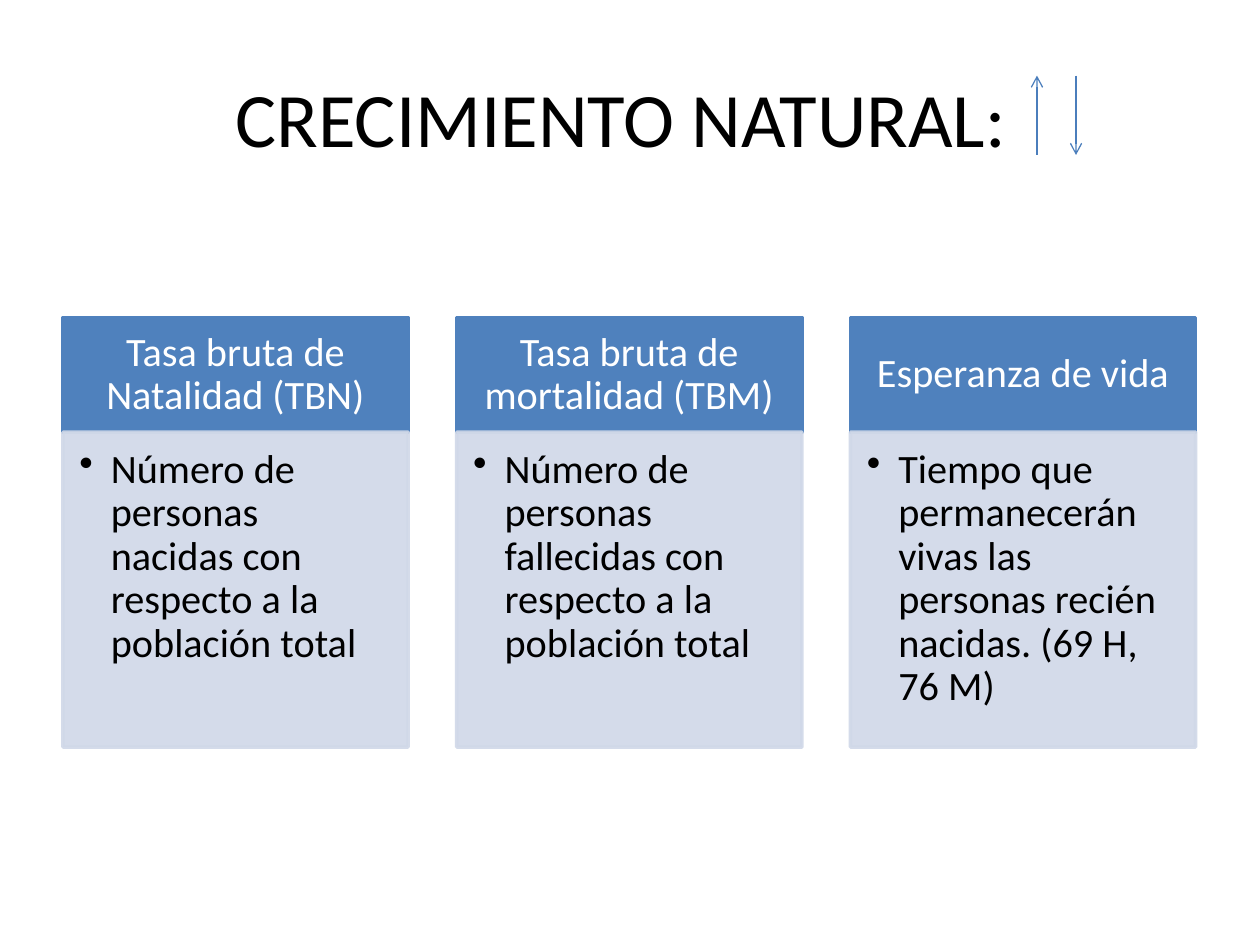
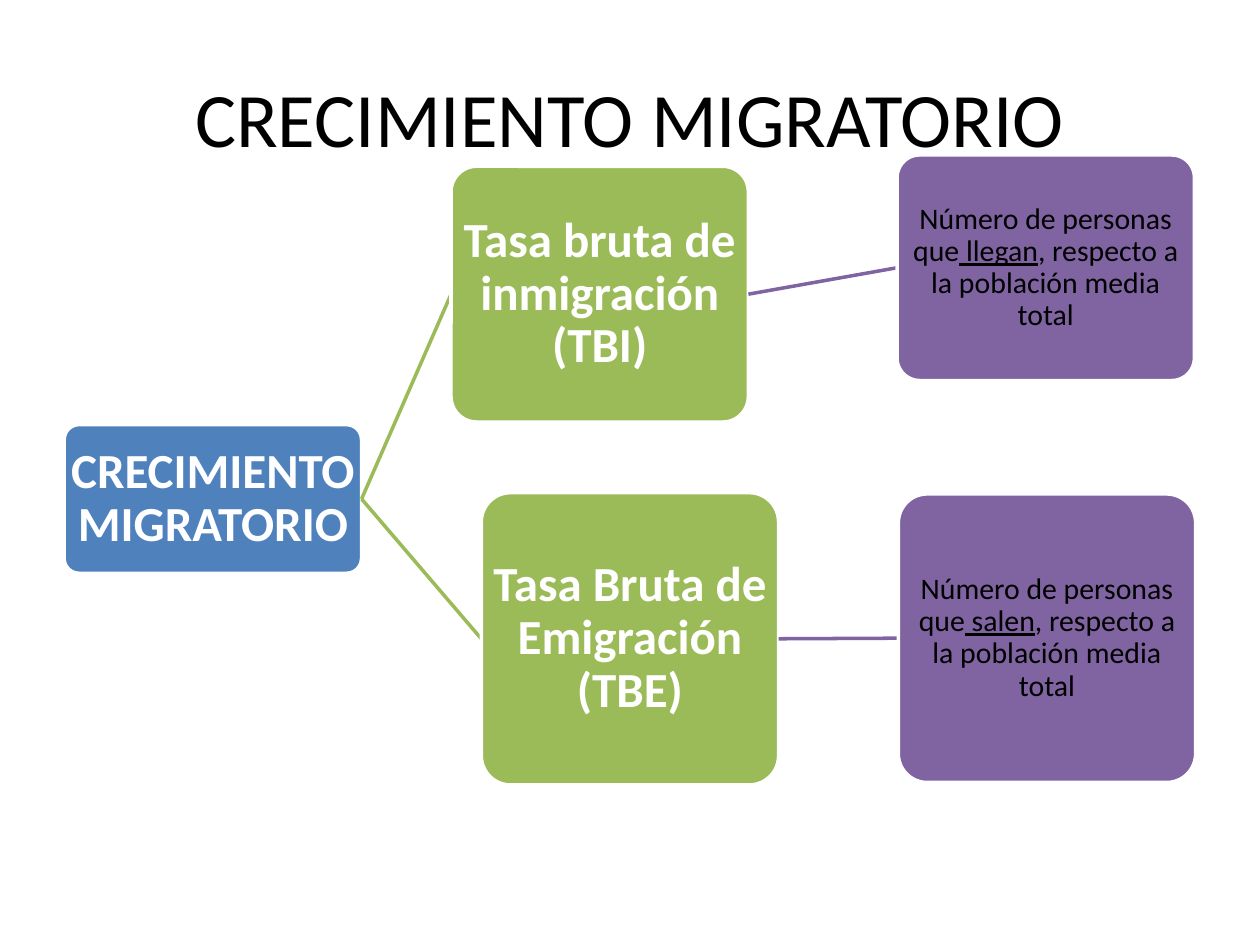
import pptx
import pptx.dml.color
import pptx.enum.shapes
import pptx.enum.text
import pptx.oxml.ns
import pptx.util
from lxml import etree

Inches = pptx.util.Inches
Pt = pptx.util.Pt
qn = pptx.oxml.ns.qn
SHAPES = pptx.enum.shapes.MSO_SHAPE
ALIGN = pptx.enum.text.PP_ALIGN
ANCHOR = pptx.enum.text.MSO_ANCHOR

COLORS = {
    "black": "000000", "white": "FFFFFF", "blue": "4F81BD", "arrow": "4B7EBC",
    "panel": "D0D8E8", "green": "9BBB59", "purple": "8064A2",
}
TITLE_BOX = (0.5, 0.3, 9, 1.25)
TITLE = {"size": 44, "color": "black"}
HEADING = {"size": 23, "color": "white", "insets": (0.18, 0.1, 0.18, 0.1)}
DETAIL = {"size": 23, "color": "black", "insets": (0.13, 0.13, 0.18, 0.2),
          "align": ALIGN.LEFT, "anchor": ANCHOR.TOP}
RATE = {"size": 28, "color": "white", "bold": True, "insets": (0.02,) * 4}
MEANING = {"size": 17, "color": "black", "insets": (0.01,) * 4}


def rgb(color):
    return pptx.dml.color.RGBColor.from_string(COLORS[color])


def write(shape, runs, size, color, bold=False, insets=(0.1, 0.05, 0.1, 0.05),
          align=ALIGN.CENTER, anchor=ANCHOR.MIDDLE, spacing=0.9):
    """Write one paragraph; runs are (text, underlined) pairs."""
    frame = shape.text_frame
    left, top, right, bottom = map(Inches, insets)
    layout = {"word_wrap": True, "vertical_anchor": anchor,
              "margin_left": left, "margin_top": top,
              "margin_right": right, "margin_bottom": bottom}
    for name, value in layout.items():
        setattr(frame, name, value)
    paragraph = frame.paragraphs[0]
    paragraph.alignment, paragraph.line_spacing = align, spacing
    for text, underlined in runs:
        run = paragraph.add_run()
        run.text = text
        style = {"name": "Calibri", "size": Pt(size), "bold": bold, "underline": underlined}
        for name, value in style.items():
            setattr(run.font, name, value)
        run.font.color.rgb = rgb(color)
    return paragraph


def add_box(slide, kind, box, fill, line):
    shape = slide.shapes.add_shape(kind, *map(Inches, box))
    shape.shadow.inherit = False
    shape.fill.solid()
    shape.fill.fore_color.rgb = rgb(fill)
    shape.line.color.rgb = rgb(line)
    shape.line.width = Pt(2)
    return shape


def add_line(slide, start, end, color, width):
    line = slide.shapes.add_connector(
        pptx.enum.shapes.MSO_CONNECTOR.STRAIGHT, *map(Inches, start + end))
    line.line.color.rgb = rgb(color)
    line.line.width = Pt(width)
    etree.SubElement(line._element.spPr, qn("a:effectLst"))
    return line


def add_title(slide, text):
    write(slide.shapes.add_textbox(*map(Inches, TITLE_BOX)), [(text, False)],
          spacing=1.0, **TITLE)


def add_arrow(slide, start, end):
    arrow = add_line(slide, start, end, "arrow", 0.75)
    etree.SubElement(arrow.line._get_or_add_ln(), qn("a:tailEnd"), type="arrow")


def add_bullet(paragraph):
    properties = paragraph._p.get_or_add_pPr()
    properties.set("marL", str(Inches(0.25)))
    properties.set("indent", str(-Inches(0.25)))
    etree.SubElement(properties, qn("a:buChar"), char="•")


def add_rate_card(slide, box, heading, detail):
    """A solid heading above a translucent panel with one bullet."""
    left, top, width, height = box
    heading_height = 0.91
    header = add_box(slide, SHAPES.RECTANGLE, (left, top, width, heading_height), "blue", "blue")
    write(header, [(heading, False)], **HEADING)
    panel = add_box(slide, SHAPES.RECTANGLE,
                    (left, top + heading_height, width, height - heading_height),
                    "panel", "panel")
    for color in panel._element.spPr.iter(qn("a:srgbClr")):
        etree.SubElement(color, qn("a:alpha"), val="90000")
    add_bullet(write(panel, [(detail, False)], **DETAIL))


def add_node(slide, box, fill, runs, style, parent=None):
    """A rounded node, joined to its parent by a line lying beneath it."""
    left, top, width, height = box
    if parent is not None:
        middle = (left, top + height / 2)
        branch = add_line(slide, middle, middle, fill, 2)
        branch.begin_connect(parent, 3)
    node = add_box(slide, SHAPES.ROUNDED_RECTANGLE, box, fill, "white")
    node.adjustments[0] = 0.1
    write(node, runs, **style)
    if parent is not None:
        branch.end_connect(node, 1)
    return node


def build_natural_growth(slide):
    add_title(slide, "CRECIMIENTO NATURAL: ")
    # Three cards in equal columns
    cards = [
        ("Tasa bruta de Natalidad (TBN)",
         "Número de personas nacidas con respecto a la población total"),
        ("Tasa bruta de mortalidad (TBM)",
         "Número de personas fallecidas con respecto a la población total"),
        ("Esperanza de vida",
         "Tiempo que permanecerán vivas las personas recién nacidas. (69 H, 76 M)"),
    ]
    for column, (heading, detail) in enumerate(cards):
        add_rate_card(slide, (0.5 + column * 3.125, 2.52, 2.74, 3.41), heading, detail)
    # Rise and fall arrows beside the title
    add_arrow(slide, (8.23, 1.23), (8.23, 0.6))
    add_arrow(slide, (8.54, 0.6), (8.54, 1.23))


def build_migratory_growth(slide):
    add_title(slide, "CRECIMIENTO MIGRATORIO")
    # Root of the tree
    width = 2.36
    growth = add_node(slide, (0.51, 3.37, width, 1.18), "blue",
                      [("CRECIMIENTO MIGRATORIO", False)], RATE)
    # Each rate and its meaning
    branches = [
        ("Tasa bruta de inmigración (TBI)", (3.58, 1.32, width, 2.03),
         " llegan", (7.12, 1.23, width, 1.79)),
        ("Tasa Bruta de Emigración (TBE)", (3.82, 3.91, width, 2.32),
         " salen", (7.13, 3.92, width, 2.29)),
    ]
    for rate_name, rate_box, verb, meaning_box in branches:
        rate = add_node(slide, rate_box, "green", [(rate_name, False)], RATE, growth)
        meaning = [("Número de personas que", False), (verb, True),
                   (", respecto a la población media total", False)]
        add_node(slide, meaning_box, "purple", meaning, MEANING, rate)


def main():
    deck = pptx.Presentation()
    deck.slide_width, deck.slide_height = Inches(10), Inches(7.5)
    for build in (build_natural_growth, build_migratory_growth):
        build(deck.slides.add_slide(deck.slide_layouts[6]))
    deck.save("out.pptx")


if __name__ == "__main__":
    main()
